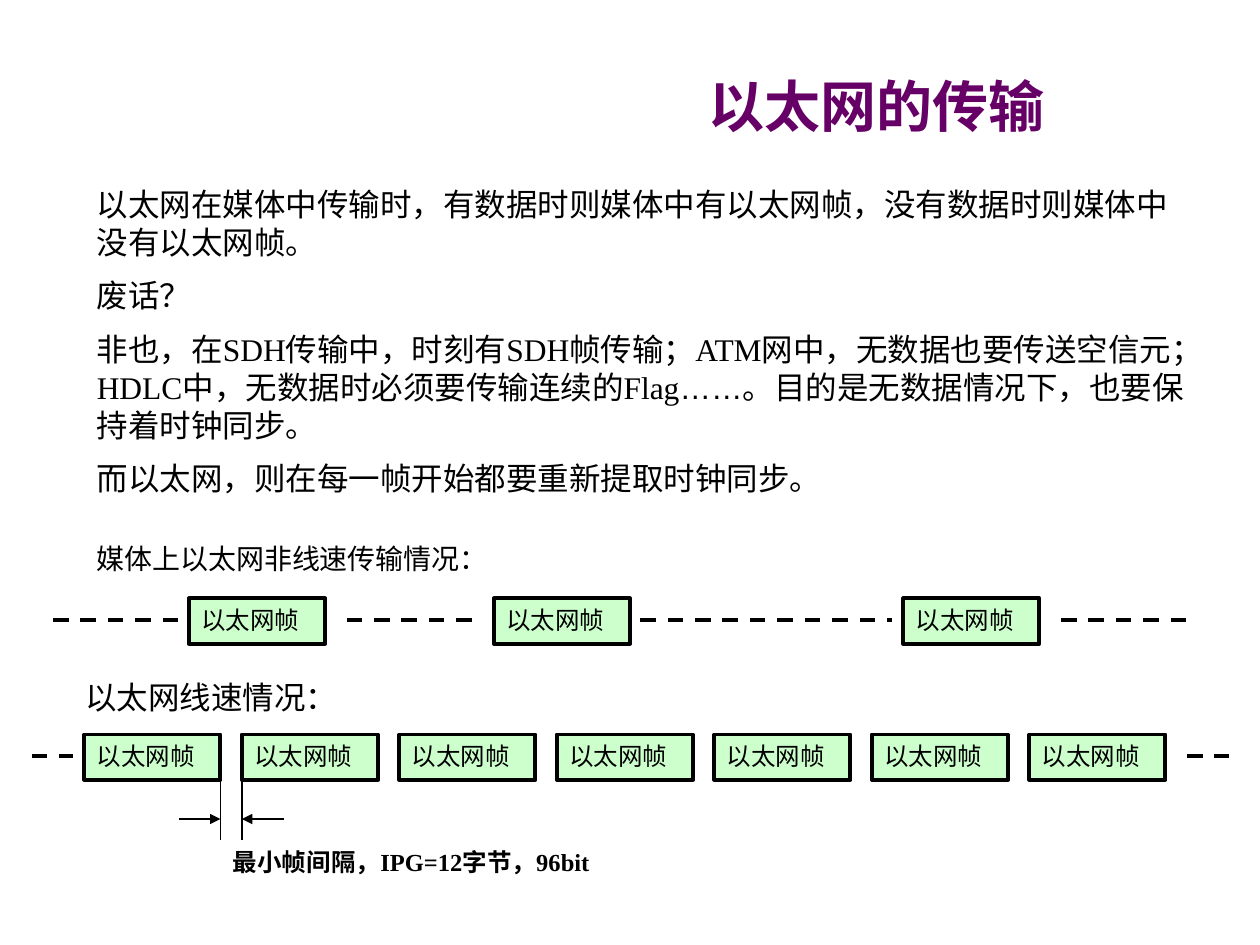
from lxml import etree
from pptx import Presentation
from pptx.dml.color import RGBColor
from pptx.enum.dml import MSO_LINE_DASH_STYLE as DASH
from pptx.enum.shapes import MSO_CONNECTOR, MSO_SHAPE
from pptx.enum.text import MSO_ANCHOR, PP_ALIGN
from pptx.oxml.ns import qn
from pptx.util import Inches, Pt

SERIF = "Times New Roman"
BLACK, WHITE, GREEN, PURPLE = "000000", "FFFFFF", "CCFFCC", "660066"
TITLE = "以太网的传输"
FRAME = "以太网帧"
BODY = [
    [("以太网在媒体中传输时，有数据时则媒体中有以太网帧，没有数据时则媒体中没有以太网帧。", SERIF)],
    [("废话？", SERIF)],
    [("非也，在SDH传输中，时刻有SDH帧传输；ATM网中，无数据也要传送空信元；"
      "HDLC中，无数据时必须要传输连续的Flag", SERIF),
     ("……", "Arial"),
     ("。目的是无数据情况下，也要保持着时钟同步。", SERIF)],
    [("而以太网，则在每一帧开始都要重新提取时钟同步。", SERIF)],
]
LABELS = [
    ("媒体上以太网非线速传输情况：", (0.67, 4.25, 4, 0.37), 16, False),
    ("以太网线速情况：", (0.58, 5.33, 2.75, 0.4), 18, False),
    ("最小帧间隔，IPG=12字节，96bit", (1.75, 6.67, 3.17, 0.33), 14, True),
]
FRAME_W, FRAME_H, PITCH = 1.08, 0.36, 1.25
SPARSE_Y, FULL_Y = 4.75, 5.83
SPARSE_X = [1.5, 3.92, 7.17]
FULL_X = [0.67 + PITCH * i for i in range(7)]
IDLE = [
    (4.92, [(0.42, 1.42), (2.75, 3.75), (5.08, 7.08), (8.42, 9.42)]),
    (6, [(0.25, 0.58), (9.42, 9.75)]),
]
GAP_EDGES = [(1.75, 1.42), (1.92, 2.25)]


def rgb(value):
    """Turn a hex string into a colour."""
    return RGBColor.from_string(value)


def write(shape, paragraphs, size, color=BLACK, bold=False, align=PP_ALIGN.LEFT,
          anchor=MSO_ANCHOR.TOP):
    """Fill a shape with paragraphs of (text, font) runs."""
    tf = shape.text_frame
    tf.word_wrap = True
    tf.vertical_anchor = anchor
    for i, runs in enumerate(paragraphs):
        p = tf.add_paragraph() if i else tf.paragraphs[0]
        p.alignment = align
        if i:
            p.space_before = Pt(size / 2)
        for text, font in runs:
            r = p.add_run()
            r.text = text
            r.font.name = font
            r.font.size = Pt(size)
            r.font.bold = bold
            r.font.color.rgb = rgb(color)


def add_text(s, box, paragraphs, size, bold=False):
    """Add a wrapped text box."""
    write(s.shapes.add_textbox(*map(Inches, box)), paragraphs, size, bold=bold)


def add_rect(s, box, fill, line=None):
    """Add a flat rectangle."""
    sp = s.shapes.add_shape(MSO_SHAPE.RECTANGLE, *map(Inches, box))
    sp.shadow.inherit = False
    sp.fill.solid()
    sp.fill.fore_color.rgb = rgb(fill)
    if line:
        sp.line.color.rgb = rgb(line)
        sp.line.width = Pt(2.25)
    else:
        sp.line.fill.background()
    return sp


def add_line(s, ends, width, dash=None, arrow=False):
    """Add a straight black line."""
    c = s.shapes.add_connector(MSO_CONNECTOR.STRAIGHT, *map(Inches, ends))
    c.line.color.rgb = rgb(BLACK)
    c.line.width = Pt(width)
    if dash:
        c.line.dash_style = dash
    if arrow:
        etree.SubElement(c.line._get_or_add_ln(), qn("a:tailEnd"), type="triangle")
    etree.SubElement(c._element.spPr, qn("a:effectLst"))


def main():
    """Build the slide."""
    prs = Presentation()
    prs.slide_width, prs.slide_height = Inches(10), Inches(7.5)
    s = prs.slides.add_slide(prs.slide_layouts[6])

    title = add_rect(s, (4.33, 0.5, 5.25, 0.67), WHITE)
    write(title, [[(TITLE, SERIF)]], 32, PURPLE, True, PP_ALIGN.CENTER, MSO_ANCHOR.MIDDLE)
    add_text(s, (0.67, 1.42, 8.83, 2.66), BODY, 18)
    for text, box, size, bold in LABELS:
        add_text(s, box, [[(text, SERIF)]], size, bold)

    for y, lefts in ((SPARSE_Y, SPARSE_X), (FULL_Y, FULL_X)):
        for x in lefts:
            sp = add_rect(s, (x, y, FRAME_W, FRAME_H), GREEN, BLACK)
            write(sp, [[(FRAME, SERIF)]], 14)
    for y, spans in IDLE:
        for x1, x2 in spans:
            add_line(s, (x1, y, x2, y), 2.25, DASH.DASH)
    for edge, start in GAP_EDGES:
        add_line(s, (edge, 6.17, edge, 6.67), 0.75)
        add_line(s, (start, 6.5, edge, 6.5), 0.75, arrow=True)

    prs.save("out.pptx")


if __name__ == "__main__":
    main()
